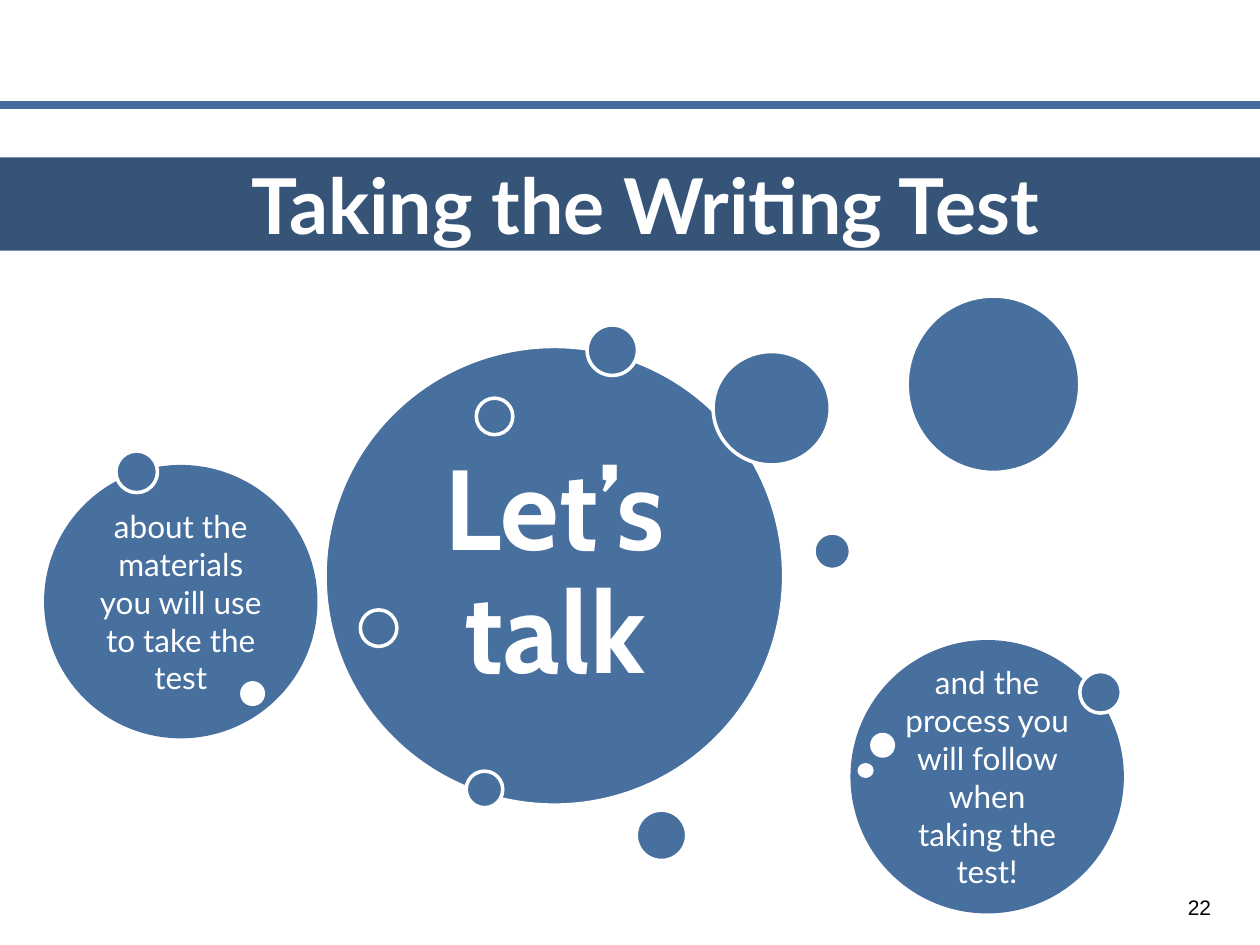
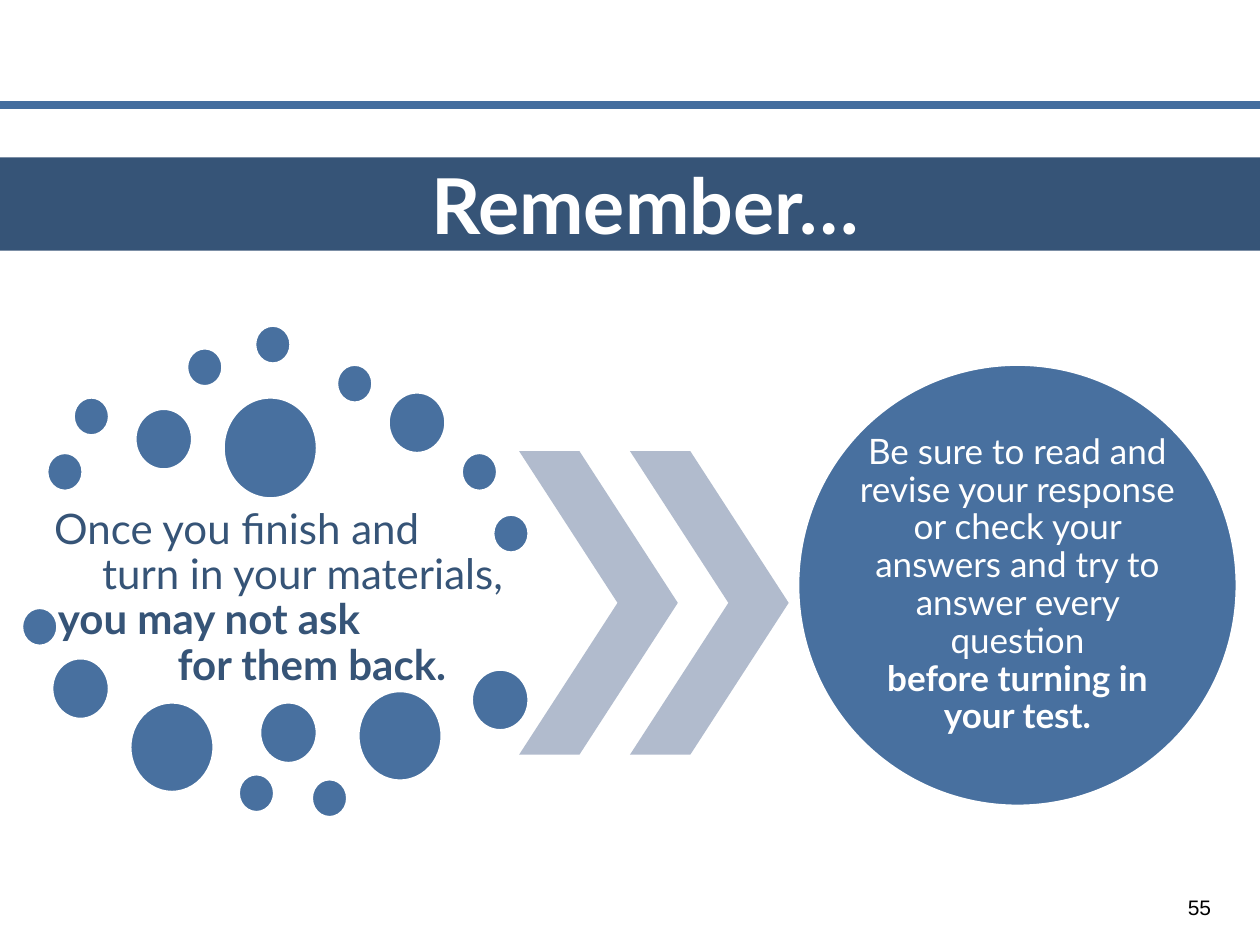
from dataclasses import dataclass

from lxml import etree
from pptx import Presentation, util as u
from pptx.dml.color import RGBColor
from pptx.enum import shapes, text
from pptx.oxml.ns import qn


@dataclass(frozen=True)
class Theme:
    rule: str = "446D9E"
    band: str = "365477"
    bubble: str = "48709F"
    chevron: str = "B1BBCD"
    white: str = "FFFFFF"
    black: str = "000000"
    body_font: str = "Lato"
    talk_font: str = "Cabin"
    number_font: str = "Arial"
    title_size: int = 44
    talk_size: int = 65
    warning_size: int = 24
    advice_size: int = 20
    topic_size: int = 18
    number_size: int = 12
    outline: int = 2
    rule_width: float = 4.5


THEME = Theme()
COLUMNS, ROWS = 100, 75
CELL = u.Inches(0.1)
OVAL = shapes.MSO_SHAPE.OVAL
DISC = shapes.MSO_SHAPE.FLOWCHART_CONNECTOR
SMALL, MEDIUM, LARGE, LARGEST = (2.9, 3.1), (4.6, 4.9), (6.7, 7.2), (7.5, 8.1)

TALK_BUBBLES = [
    (46.6, 25.8, 4), (37, 61.2, 2.9), (64.6, 42.3, 2.9),
    (50.5, 64.3, 4), (37.8, 31.6, 2.9), (28.6, 48.4, 2.9),
]
RING_BUBBLES = {
    SMALL: [(3.7, 35.9), (5.8, 31.5), (14.8, 27.6), (20.2, 25.8), (26.7, 28.9),
            (36.6, 35.9), (39.1, 40.8), (1.7, 48.2), (18.9, 61.4), (24.7, 61.8)],
    MEDIUM: [(10.7, 32.4), (30.8, 31.1), (4.1, 52.2), (20.6, 55.7), (37.4, 53.1)],
    LARGE: [(10.3, 55.7), (28.4, 54.8)],
    LARGEST: [(17.7, 31.5)],
}


def cells(*counts):
    return [round(count * CELL) for count in counts]


def colour(code):
    return RGBColor.from_string(code)


def add_filled(slide, preset, area, fill, outline=None):
    figure = slide.shapes.add_shape(preset, *cells(*area))
    figure.shadow.inherit = False
    figure.fill.solid()
    figure.fill.fore_color.rgb = colour(fill)
    if outline:
        figure.line.color.rgb = colour(outline)
        figure.line.width = u.Pt(THEME.outline)
    else:
        figure.line.fill.background()
    return figure


def add_bubble(slide, left, top, width, height=None, preset=OVAL, fill=THEME.bubble):
    area = (left, top, width, height or width)
    return add_filled(slide, preset, area, fill, THEME.white)


def write(holder, lines, size, ink, font=THEME.body_font, bold=(), indents=(),
          align=text.PP_ALIGN.CENTER, anchor=text.MSO_ANCHOR.MIDDLE,
          spacing=None, inset=None):
    frame = holder.text_frame
    frame.word_wrap = True
    frame.vertical_anchor = anchor
    if inset is not None:
        frame.margin_left = frame.margin_right = u.Inches(inset)
        frame.margin_top = frame.margin_bottom = u.Inches(inset)
    for index, line in enumerate(lines):
        paragraph = frame.add_paragraph() if index else frame.paragraphs[0]
        paragraph.text = line
        paragraph.alignment = align
        if spacing:
            paragraph.line_spacing = spacing
        if indents:
            properties = paragraph._p.get_or_add_pPr()
            properties.set("marL", str(u.Inches(indents[index])))
            properties.set("indent", "0")
        paragraph.font.name = font
        paragraph.font.size = u.Pt(size)
        paragraph.font.bold = index in bold
        paragraph.font.color.rgb = colour(ink)


def add_caption(slide, area, lines, size, ink, **style):
    caption = slide.shapes.add_textbox(*cells(*area))
    write(caption, lines, size, ink, **style)


def add_rule(slide):
    rule = slide.shapes.add_connector(
        shapes.MSO_CONNECTOR.STRAIGHT, *cells(0, 8.3, COLUMNS, 8.3))
    rule.line.color.rgb = colour(THEME.rule)
    rule.line.width = u.Pt(THEME.rule_width)
    etree.SubElement(rule._element.spPr, qn("a:effectLst"))


def start_slide(deck, title, number):
    slide = deck.slides.add_slide(deck.slide_layouts[6])
    add_rule(slide)
    band = add_filled(slide, shapes.MSO_SHAPE.RECTANGLE,
                      (0, 12.5, COLUMNS, 7.4), THEME.band)
    write(band, [title], THEME.title_size, THEME.white, bold=(0,),
          indents=(0.25,), anchor=text.MSO_ANCHOR.TOP, inset=0)
    add_caption(slide, (92.9, 70, 4.6, 4), [number], THEME.number_size,
                THEME.black, font=THEME.number_font)
    return slide


def add_topic(slide, left, top, words, knob, dots):
    topic = add_filled(slide, DISC, (left, top, 21.7, 21.7), THEME.bubble)
    write(topic, [words], THEME.topic_size, THEME.white)
    add_bubble(slide, *knob, 3.3, preset=DISC)
    for dot in dots:
        add_bubble(slide, *dot, preset=DISC, fill=THEME.white)


def build_talk(deck):
    slide = start_slide(deck, "Taking the Writing Test", "22")
    add_bubble(slide, 25.8, 27.5, 36.4)
    add_caption(slide, (31.2, 32.8, 25.7, 25.7), ["Let’s talk"], THEME.talk_size,
                THEME.white, font=THEME.talk_font, bold=(0,), spacing=0.9, inset=0.27)
    for bubble in TALK_BUBBLES:
        add_bubble(slide, *bubble)
    add_topic(slide, 3.5, 36.9, "about the materials you will use to take the test",
              (9.2, 35.8), [(19.2, 54.2, 1.7)])
    add_topic(slide, 67.5, 50.8, "and the process you will follow when taking the test!",
              (85.7, 53.3), [(69.2, 58.3, 1.7), (68.2, 60.7, 1, 0.9)])
    add_bubble(slide, 56.6, 27.9, 9.3, 9, preset=DISC)
    add_bubble(slide, 72, 23.5, 13.7, 14, preset=DISC)


def build_reminder(deck):
    slide = start_slide(deck, "Remember…", "55")
    warning = ["Once you finish and", "turn in your materials,",
               "you may not ask", "for them back."]
    add_caption(slide, (3.9, 41, 36.9, 13), warning, THEME.warning_size, THEME.band,
                bold=(2, 3), indents=(0, 0.38, 0.03, 0.98),
                align=text.PP_ALIGN.LEFT, spacing=0.9, inset=0.04)
    for size, corners in RING_BUBBLES.items():
        for corner in corners:
            add_bubble(slide, *corner, *size)
    for step in range(2):
        chevron = add_filled(slide, shapes.MSO_SHAPE.CHEVRON,
                             (41.2 + 8.8 * step, 35.8, 12.6, 24.1), THEME.chevron)
        chevron.adjustments[0] = 0.62
    add_bubble(slide, 63.3, 28.9, 34.9, 35.1)
    advice = ["Be sure to read and revise your response or check your answers "
              "and try to answer every question", "before turning in your test."]
    add_caption(slide, (68, 33.5, 25.5, 25.9), advice, THEME.advice_size,
                THEME.white, bold=(1,), spacing=0.9, inset=0)


def main():
    deck = Presentation()
    deck.slide_width, deck.slide_height = cells(COLUMNS, ROWS)
    build_talk(deck)
    build_reminder(deck)
    deck.save("out.pptx")


if __name__ == "__main__":
    main()
